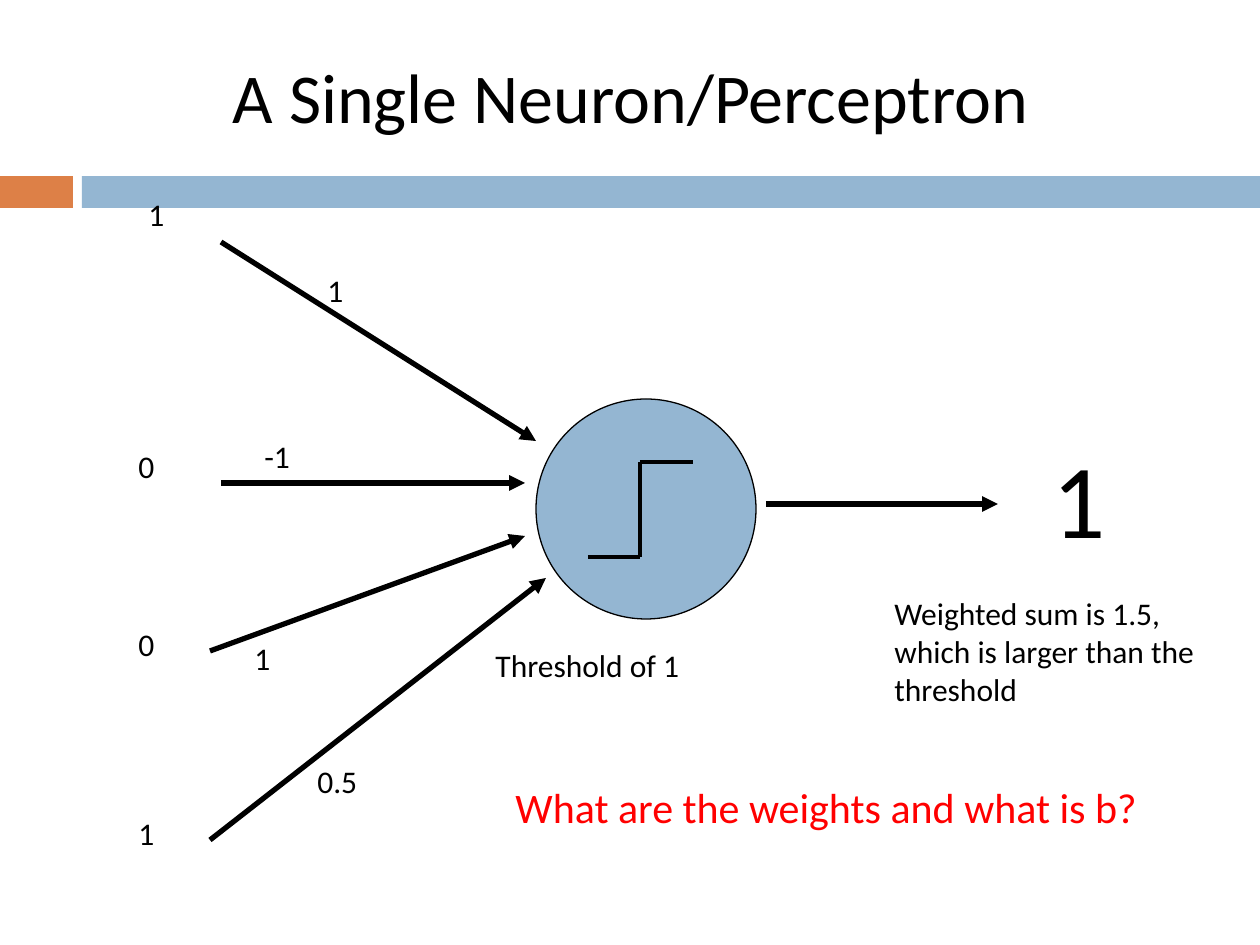
from dataclasses import dataclass
from itertools import pairwise
from typing import Any

from lxml.etree import SubElement
from pptx import Presentation
from pptx.dml.color import RGBColor
from pptx.enum.shapes import MSO_CONNECTOR, MSO_SHAPE
from pptx.enum.text import MSO_ANCHOR, MSO_AUTO_SIZE, PP_ALIGN
from pptx.oxml.ns import qn
from pptx.util import Emu, Pt

PX_PER_INCH = 126
Point = tuple[int, int]
Box = tuple[int, int, int, int]


@dataclass(frozen=True)
class Theme:
    font: str = "Calibri"
    ink: RGBColor = RGBColor(0x00, 0x00, 0x00)
    blue: RGBColor = RGBColor(0x94, 0xB6, 0xD2)
    orange: RGBColor = RGBColor(0xDD, 0x80, 0x47)
    red: RGBColor = RGBColor(0xFF, 0x00, 0x00)
    title: int = 40
    output: int = 60
    question: int = 24
    body: int = 18
    arrow: float = 3
    step: float = 2.25
    outline: float = 0.75


@dataclass(frozen=True)
class Synapse:
    """One input: its value, its weight and the arrow into the neuron."""
    value: str
    value_at: Point
    weight: str
    weight_at: Point
    start: Point
    end: Point


THEME = Theme()
SYNAPSES = [
    Synapse("1", (136, 189), "1", (315, 265), (221, 242), (536, 441)),
    Synapse("0", (126, 441), "-1", (252, 431), (221, 483), (525, 483)),
    Synapse("0", (126, 619), "1", (242, 633), (210, 651), (525, 536)),
    Synapse("1", (126, 808), "0.5", (305, 756), (210, 840), (546, 578)),
]
VALUE_SIZE = (84, 50)
WEIGHT_SIZE = (189, 50)
STEP_CURVE = [(588, 557), (640, 557), (640, 462), (693, 462)]


def px(length: int) -> Emu:
    return Emu(round(length * 914400 / PX_PER_INCH))


def write(shape: Any, text: str, *, size: int = THEME.body,
          color: RGBColor = THEME.ink, align: PP_ALIGN = PP_ALIGN.LEFT,
          wrap: bool = True) -> None:
    frame = shape.text_frame
    frame.word_wrap = wrap
    frame.auto_size = MSO_AUTO_SIZE.NONE
    frame.vertical_anchor = MSO_ANCHOR.TOP
    para = frame.paragraphs[0]
    para.alignment = align
    span = para.add_run()
    span.text = text
    span.font.name = THEME.font
    span.font.size = Pt(size)
    span.font.color.rgb = color


def add_text(shapes: Any, box: Box, text: str, **text_format: Any) -> None:
    write(shapes.add_textbox(*map(px, box)), text, **text_format)


def add_solid(shapes: Any, kind: MSO_SHAPE, box: Box, fill: RGBColor,
              outlined: bool = False) -> None:
    shape = shapes.add_shape(kind, *map(px, box))
    shape.shadow.inherit = False
    shape.fill.solid()
    shape.fill.fore_color.rgb = fill
    if outlined:
        shape.line.color.rgb = THEME.ink
        shape.line.width = Pt(THEME.outline)
    else:
        shape.line.fill.background()


def add_line(shapes: Any, start: Point, end: Point, width: float,
             arrow: bool = False) -> None:
    line = shapes.add_connector(MSO_CONNECTOR.STRAIGHT, *map(px, start + end))
    line.line.color.rgb = THEME.ink
    line.line.width = Pt(width)
    if arrow:
        SubElement(line.line._get_or_add_ln(), qn("a:tailEnd"), type="triangle")
    SubElement(line._element.spPr, qn("a:effectLst"))


def add_heading(page: Any) -> None:
    add_solid(page.shapes, MSO_SHAPE.RECTANGLE, (0, 176, 73, 32), THEME.orange)
    add_solid(page.shapes, MSO_SHAPE.RECTANGLE, (82, 176, 1178, 32), THEME.blue)
    title = page.shapes.title
    title.left, title.top, title.width, title.height = map(px, (53, 47, 1155, 97))
    write(title, "A Single Neuron/Perceptron", size=THEME.title,
          align=PP_ALIGN.CENTER)


def add_neuron(page: Any) -> None:
    neuron = page.shapes.add_group_shape().shapes
    add_solid(neuron, MSO_SHAPE.OVAL, (536, 399, 220, 220), THEME.blue,
              outlined=True)
    add_line(neuron, (766, 504), (998, 504), THEME.arrow, arrow=True)
    for synapse in SYNAPSES:
        add_line(neuron, synapse.start, synapse.end, THEME.arrow, arrow=True)
        add_text(neuron, synapse.weight_at + WEIGHT_SIZE, synapse.weight)
        add_text(page.shapes, synapse.value_at + VALUE_SIZE, synapse.value)

    step = page.shapes.add_group_shape().shapes
    for start, end in pairwise(STEP_CURVE):
        add_line(step, start, end, THEME.step)


def add_notes_on_result(page: Any) -> None:
    add_text(page.shapes, (1040, 427, 189, 140), "1", size=THEME.output)
    add_text(page.shapes, (483, 640, 347, 63), "Threshold of 1")
    add_text(page.shapes, (882, 588, 336, 127),
             "Weighted sum is 1.5, which is larger than the threshold")
    add_text(page.shapes, (503, 775, 649, 63),
             "What are the weights and what is b?",
             size=THEME.question, color=THEME.red, wrap=False)


def main() -> None:
    deck = Presentation()
    deck.slide_width, deck.slide_height = px(1260), px(945)
    page = deck.slides.add_slide(deck.slide_layouts.get_by_name("Title Only"))
    add_heading(page)
    add_neuron(page)
    add_notes_on_result(page)
    deck.save("out.pptx")


if __name__ == "__main__":
    main()
